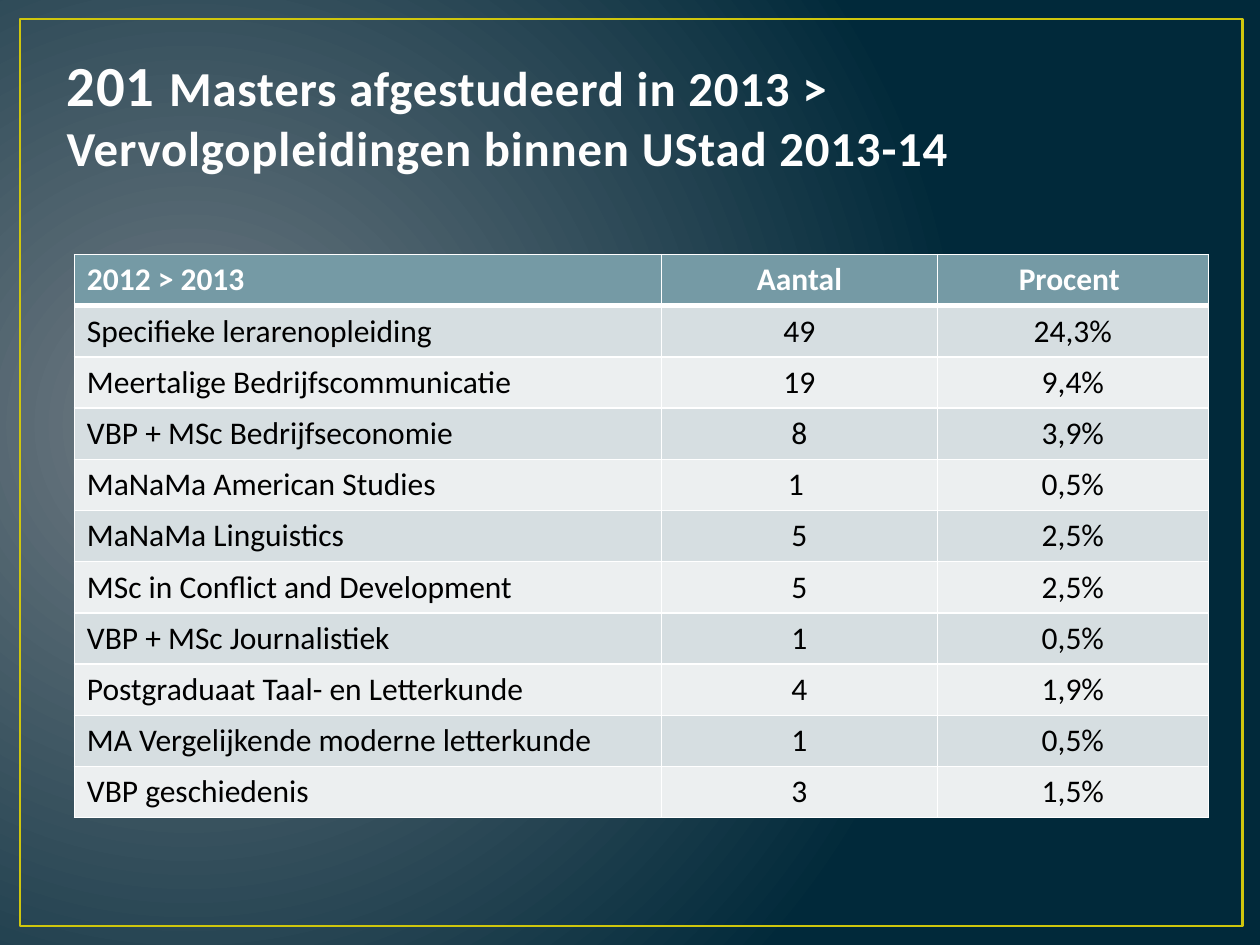
from lxml import etree
from pptx import Presentation
from pptx.dml.color import RGBColor
from pptx.enum.shapes import MSO_SHAPE
from pptx.enum.text import MSO_ANCHOR, PP_ALIGN
from pptx.oxml.ns import qn
from pptx.util import Inches, Pt

RECTANGLE = MSO_SHAPE.RECTANGLE
BOTTOM = MSO_ANCHOR.BOTTOM
LEFT, CENTER = PP_ALIGN.LEFT, PP_ALIGN.CENTER
FONT = "Calibri"
COLORS = {
    "glow": "717C84", "night": "01293A", "frame": "CFC60D",
    "title": "FEFEFE", "outline": "384F55", "header": "759AA5",
    "odd": "D6DEE1", "even": "ECEFF0", "white": "FFFFFF", "black": "000000",
}
HEADER = ("2012 > 2013", "Aantal", "Procent ")
PROGRAMMES = [
    ("Specifieke lerarenopleiding", "49", "24,3%"),
    ("Meertalige Bedrijfscommunicatie", "19", "9,4%"),
    ("VBP + MSc Bedrijfseconomie", "8", "3,9%"),
    ("MaNaMa American Studies", "1 ", "0,5%"),
    ("MaNaMa Linguistics", "5", "2,5%"),
    ("MSc in Conflict and Development", "5", "2,5%"),
    ("VBP + MSc Journalistiek", "1", "0,5%"),
    ("Postgraduaat Taal- en Letterkunde", "4", "1,9%"),
    ("MA Vergelijkende moderne letterkunde", "1", "0,5%"),
    ("VBP geschiedenis", "3", "1,5%"),
]
COLUMN_WIDTHS = (4.66, 2.19, 2.15)


def rgb(name):
    """Return the named colour."""
    return RGBColor.from_string(COLORS[name])


def add_line(parent, tag, color, points):
    """Append a solid line of the given tag to a properties element."""
    line = etree.SubElement(parent, qn(tag), w=str(Pt(points)))
    fill = etree.SubElement(line, qn("a:solidFill"))
    etree.SubElement(fill, qn("a:srgbClr"), val=COLORS[color])
    return line


def add_text(para, text, size, color, bold=False, align=LEFT):
    """Add a formatted run to a paragraph and return it."""
    para.alignment = align
    span = para.add_run()
    span.text = text
    span.font.name = FONT
    span.font.size = Pt(size)
    span.font.bold = bold
    span.font.color.rgb = rgb(color)
    return span


def paint_background(page):
    """Fill the page with a round glow left of the middle."""
    fill = page.background.fill
    fill.gradient()
    for stop, color, position in zip(fill.gradient_stops, ("glow", "night"), (0, 1)):
        stop.color.rgb = rgb(color)
        stop.position = position
    linear = next(page.element.iter(qn("a:lin")))
    radial = etree.Element(qn("a:path"), {"path": "circle"})
    etree.SubElement(radial, qn("a:fillToRect"), l="15000", t="50000", r="85000", b="60000")
    linear.getparent().replace(linear, radial)


def add_frame(page, left, top, width, height):
    """Draw the thin frame around the page."""
    frame = page.shapes.add_shape(
        RECTANGLE, Inches(left), Inches(top), Inches(width), Inches(height))
    frame.shadow.inherit = False
    frame.fill.background()
    frame.line.color.rgb = rgb("frame")
    frame.line.width = Pt(1.5)


def add_title(page, left, top, width, height):
    """Write the outlined title, growing upwards from the bottom of its box."""
    box = page.shapes.add_textbox(
        Inches(left), Inches(top), Inches(width), Inches(height))
    box.text_frame.word_wrap = True
    box.text_frame.vertical_anchor = BOTTOM
    para = box.text_frame.paragraphs[0]
    parts = (
        ("201 ", 32.4),
        ("Masters afgestudeerd in 2013 > Vervolgopleidingen binnen UStad 2013-14", 27.9),
    )
    for text, size in parts:
        span = add_text(para, text, size, "title", bold=True)
        properties = span.font._element
        properties.set("spc", "50")
        properties.insert(0, add_line(properties, "a:ln", "outline", 1.05))


def fill_cell(cell, text, fill, color, bold, align, bottom):
    """Write one table cell with its borders and fill."""
    properties = cell._tc.get_or_add_tcPr()
    for tag, points in (("a:lnL", 1), ("a:lnR", 1), ("a:lnT", 1), ("a:lnB", bottom)):
        add_line(properties, tag, "white", points)
    cell.fill.solid()
    cell.fill.fore_color.rgb = rgb(fill)
    add_text(cell.text_frame.paragraphs[0], text, 18, color, bold, align)


def add_programme_table(page, left, top, width, height):
    """Place the table of follow-up programmes."""
    rows = [HEADER] + PROGRAMMES
    table = page.shapes.add_table(
        len(rows), len(HEADER), Inches(left), Inches(top),
        Inches(width), Inches(height)).table
    for column, column_width in zip(table.columns, COLUMN_WIDTHS):
        column.width = Inches(column_width)
    for r, values in enumerate(rows):
        is_header = r == 0
        fill = "header" if is_header else "odd" if r % 2 else "even"
        for c, text in enumerate(values):
            fill_cell(
                table.cell(r, c), text, fill,
                color="white" if is_header else "black",
                bold=is_header,
                align=CENTER if c else LEFT,
                bottom=3 if is_header else 1)


def main():
    """Build the deck and save it."""
    deck = Presentation()
    deck.slide_width, deck.slide_height = Inches(10), Inches(7.5)
    page = deck.slides.add_slide(deck.slide_layouts[6])
    paint_background(page)
    add_frame(page, 0.16, 0.15, 9.7, 7.2)
    add_title(page, 0.43, 0.76, 9, 0.69)
    add_programme_table(page, 0.59, 2.02, sum(COLUMN_WIDTHS), 4.47)
    deck.save("out.pptx")


if __name__ == "__main__":
    main()
